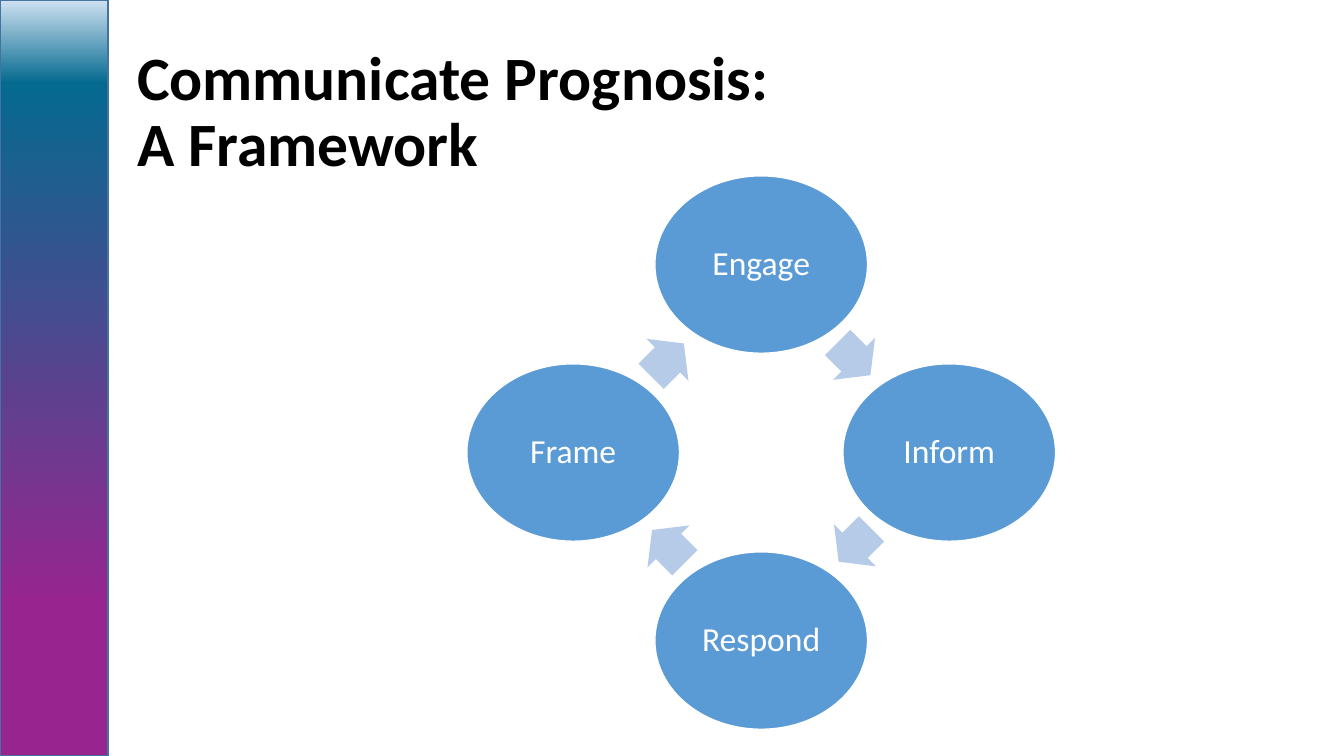
import copy

import pptx
import pptx.dml.color
import pptx.enum.shapes
import pptx.enum.text
import pptx.oxml.ns
import pptx.util

Inches = pptx.util.Inches
RGBColor = pptx.dml.color.RGBColor
Shapes = pptx.enum.shapes.MSO_SHAPE
Align = pptx.enum.text.PP_ALIGN

BLACK = RGBColor(0x00, 0x00, 0x00)
WHITE = RGBColor(0xFF, 0xFF, 0xFF)
BLUE = RGBColor(0x5B, 0x9B, 0xD5)
PALE_BLUE = RGBColor(0xB5, 0xCB, 0xE7)
EDGE_BLUE = RGBColor(0x43, 0x73, 0x9E)
MAGENTA = RGBColor(0x98, 0x25, 0x8F)
TEAL = RGBColor(0x05, 0x6A, 0x8F)
ICE = RGBColor(0xCE, 0xE1, 0xF2)

STEPS = ["Engage", "Inform", "Respond", "Frame"]
CENTER = (7.55, 4.49)
STEP_OFFSET = (0, -1.865)
ARROW_OFFSET = (0.92, -0.93)


def write_text(box, text, *, size, color, bold=False, align=Align.LEFT, inset=None):
    """Write one paragraph; each line of text becomes a span after a line break."""
    frame = box.text_frame
    frame.word_wrap = True
    frame.auto_size = pptx.enum.text.MSO_AUTO_SIZE.NONE
    frame.vertical_anchor = pptx.enum.text.MSO_ANCHOR.MIDDLE
    if inset is not None:
        frame.margin_left = frame.margin_right = Inches(inset)
        frame.margin_top = frame.margin_bottom = Inches(inset)
    para = frame.paragraphs[0]
    para.alignment = align
    para.line_spacing = 0.9
    for index, line in enumerate(text.split("\n")):
        if index:
            para.add_line_break()
        span = para.add_run()
        span.text = line
        span.font.name = SlideBuilder.FONT
        span.font.size = pptx.util.Pt(size)
        span.font.bold = bold
        span.font.color.rgb = color


def quarter_turns(offset, count):
    """Turn an offset clockwise by 90 degrees, count times."""
    x, y = offset
    for _ in range(count):
        x, y = -y, x
    return x, y


class SlideBuilder:
    FONT = "Calibri"

    def __init__(self, deck):
        self.page = deck.slides.add_slide(deck.slide_layouts[5])

    def title(self, text, left, top, width, height):
        box = self.page.shapes.title
        box.left, box.top = Inches(left), Inches(top)
        box.width, box.height = Inches(width), Inches(height)
        write_text(box, text, size=44, color=BLACK, bold=True)

    def shape(self, kind, left, top, width, height, fill=None, line=None):
        box = self.page.shapes.add_shape(
            kind, Inches(left), Inches(top), Inches(width), Inches(height))
        box.shadow.inherit = False
        if fill is not None:
            box.fill.solid()
            box.fill.fore_color.rgb = fill
        if line is None:
            box.line.fill.background()
        else:
            box.line.color.rgb = line
            box.line.width = pptx.util.Pt(1)
        return box

    def sidebar(self, width, height, stops):
        fill = self.shape(Shapes.RECTANGLE, 0, 0, width, height, line=EDGE_BLUE).fill
        fill.gradient()
        fill.gradient_angle = 90
        # The default gradient has two stops; add one more
        stop_list = fill._fill._gradFill.find(pptx.oxml.ns.qn("a:gsLst"))
        stop_list.append(copy.deepcopy(stop_list[-1]))
        for stop, (position, color) in zip(fill.gradient_stops, stops):
            stop.position = position
            stop.color.rgb = color

    def centered(self, kind, offset, width, height, **style):
        left = CENTER[0] + offset[0] - width / 2
        top = CENTER[1] + offset[1] - height / 2
        return self.shape(kind, left, top, width, height, **style)

    def step(self, text, offset):
        box = self.centered(Shapes.OVAL, offset, 2.11, 1.76, fill=BLUE, line=WHITE)
        write_text(box, text, size=24, color=WHITE, align=Align.CENTER, inset=0.03)

    def arrow(self, offset, rotation):
        box = self.centered(Shapes.RIGHT_ARROW, offset, 0.46, 0.59, fill=PALE_BLUE)
        box.adjustments[0], box.adjustments[1] = 0.6, 0.5
        box.rotation = rotation


def main():
    deck = pptx.Presentation()
    deck.slide_width, deck.slide_height = Inches(13.33), Inches(7.5)
    builder = SlideBuilder(deck)

    # Sidebar and title
    builder.sidebar(1.07, 7.5, [(0.2, MAGENTA), (0.89, TEAL), (1.0, ICE)])
    builder.title("Communicate Prognosis:\nA Framework", 1.26, 0.4, 11.64, 1.45)

    # Cycle of steps, each followed by an arrow
    for index, text in enumerate(STEPS):
        builder.step(text, quarter_turns(STEP_OFFSET, index))
        builder.arrow(quarter_turns(ARROW_OFFSET, index), 45 + 90 * index)

    deck.save("out.pptx")


if __name__ == "__main__":
    main()
